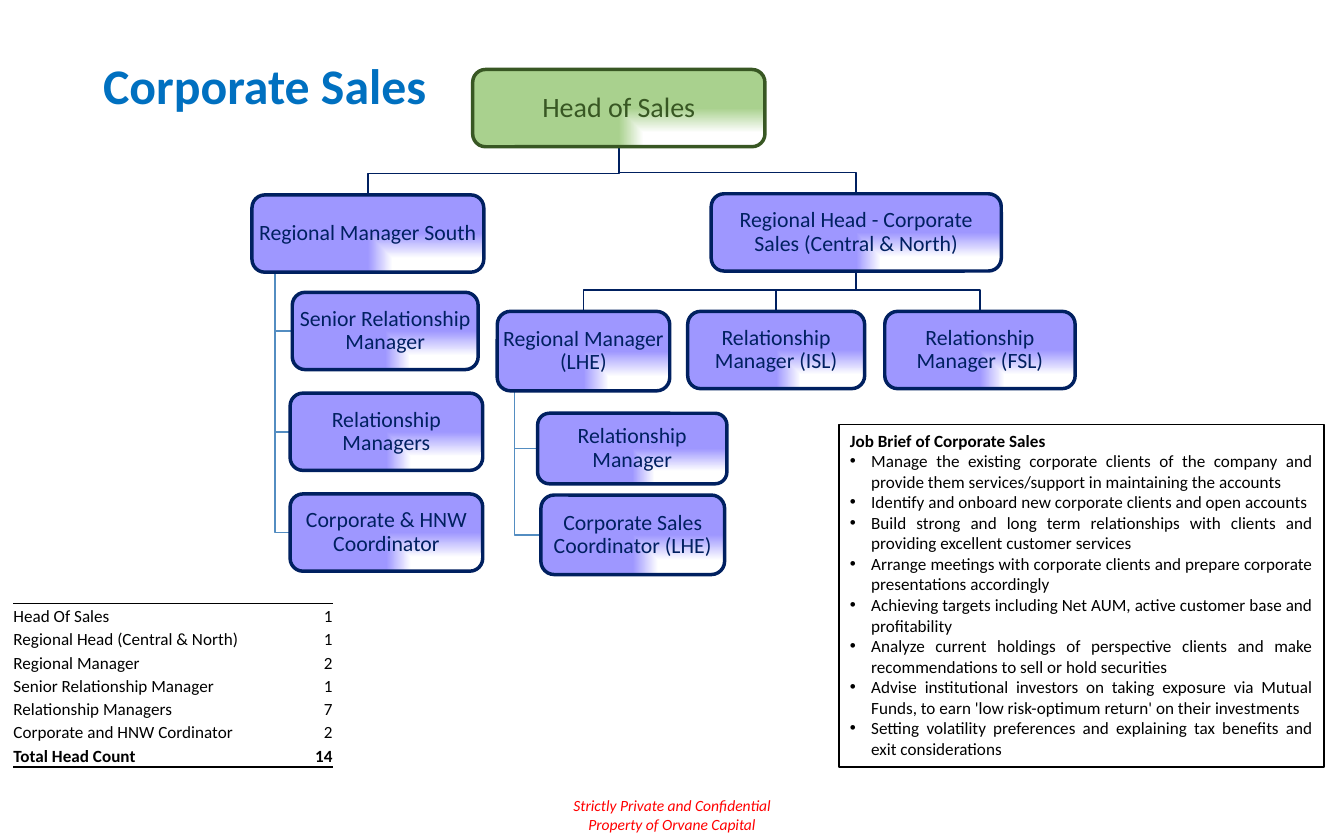
from lxml import etree
from pptx import Presentation
from pptx.dml.color import RGBColor
from pptx.enum import shapes, text
from pptx.oxml import ns
from pptx.util import Inches, Pt

C = {"title": "0070C0", "navy": "002060", "branch": "538DC1", "lilac": "9E97FF",
     "green": "A9D18E", "dark_green": "385723", "black": "000000", "white": "FFFFFF", "red": "FF0000"}
A = "http://schemas.openxmlformats.org/drawingml/2006/main"
ALIGN = text.PP_ALIGN


def write(p, words, size, color, align, **font):
    p.alignment = align
    r = p.add_run()
    r.text = words
    r.font.color.rgb = RGBColor.from_string(C[color])
    for name, value in {"name": "Calibri", "size": Pt(size), **font}.items():
        setattr(r.font, name, value)


def frame(tf, inset_x, inset_y, anchor):
    for name, value in {"word_wrap": True, "vertical_anchor": anchor,
                        "margin_left": Inches(inset_x), "margin_right": Inches(inset_x),
                        "margin_top": Inches(inset_y), "margin_bottom": Inches(inset_y)}.items():
        setattr(tf, name, value)
    return tf


prs = Presentation()
prs.slide_width, prs.slide_height = Inches(12), Inches(7.5)
s = prs.slides.add_slide(prs.slide_layouts[5])

# Title
title = s.shapes.title
for name, value in {"left": 0.82, "top": 0.4, "width": 3.98, "height": 0.77}.items():
    setattr(title, name, Inches(value))
tf = frame(title.text_frame, 0.1, 0.05, text.MSO_ANCHOR.MIDDLE)
tf.paragraphs[0].line_spacing = 0.9
write(tf.paragraphs[0], "Corporate Sales", 32, "title", ALIGN.LEFT, bold=True)

# Confidentiality footer
sp = s.shapes.add_textbox(Inches(5.01), Inches(7.06), Inches(1.98), Inches(0.44))
tf = frame(sp.text_frame, 0.1, 0.05, text.MSO_ANCHOR.TOP)
write(tf.paragraphs[0], "Strictly Private and Confidential", 10, "red", ALIGN.CENTER, italic=True)
write(tf.add_paragraph(), "Property of Orvane Capital", 10, "red", ALIGN.CENTER, italic=True)

# Organisation chart: key -> label, left, top, width, height
boxes = {
    "head": ("Head of Sales", 4.22, 0.62, 2.61, 0.69),
    "south": ("Regional Manager South", 2.25, 1.74, 2.07, 0.69),
    "senior": ("Senior Relationship Manager", 2.61, 2.61, 1.66, 0.69),
    "managers": ("Relationship Managers", 2.59, 3.51, 1.72, 0.69),
    "hnw": ("Corporate & HNW Coordinator", 2.59, 4.41, 1.72, 0.69),
    "north": ("Regional Head - Corporate Sales (Central & North)", 6.35, 1.73, 2.59, 0.69),
    "lhe": ("Regional Manager (LHE)", 4.44, 2.78, 1.54, 0.71),
    "lhe_manager": ("Relationship Manager", 4.8, 3.69, 1.69, 0.63),
    "lhe_coordinator": ("Corporate Sales Coordinator (LHE)", 4.83, 4.42, 1.64, 0.71),
    "isl": ("Relationship Manager (ISL)", 6.14, 2.78, 1.58, 0.69),
    "fsl": ("Relationship Manager (FSL)", 7.9, 2.78, 1.7, 0.69),
}
reports = {"north": ["fsl", "isl", "lhe"], "lhe": ["lhe_coordinator", "lhe_manager"],
           "head": ["north", "south"], "south": ["hnw", "managers", "senior"]}
hanging = ("lhe", "south")  # their reports hang from a line on the left

# Reporting lines, behind the boxes
for boss, staff in reports.items():
    _, left, top, width, height = boxes[boss]
    bottom = top + height
    for member in staff:
        _, x, y, w, h = boxes[member]
        if boss in hanging:
            trunk = left + width / 10
            points = [(trunk, bottom), (trunk, y + h / 2), (x, y + h / 2)]
        else:
            trunk, bend = left + width / 2, y - 0.19
            points = [(trunk, bottom), (trunk, bend), (x + w / 2, bend), (x + w / 2, y)]
        points = [(Inches(px), Inches(py)) for px, py in points]
        fb = s.shapes.build_freeform(*points[0])
        fb.add_line_segments(points[1:], close=False)
        sp = fb.convert_to_shape()
        sp.shadow.inherit = False
        sp.fill.background()
        sp.line.width = Pt(1)
        sp.line.color.rgb = RGBColor.from_string(C["branch" if boss in hanging else "navy"])

# Boxes with a white glow in the lower right corner
for key, (label, *place) in boxes.items():
    fill, ink, size = ("green", "dark_green", 18) if key == "head" else ("lilac", "navy", 14)
    sp = s.shapes.add_shape(shapes.MSO_SHAPE.ROUNDED_RECTANGLE, *map(Inches, place))
    sp.shadow.inherit = False
    sp.line.width = Pt(2.25)
    sp.line.color.rgb = RGBColor.from_string(C[ink])
    sp.fill.background()
    stops = "".join(f'<a:gs pos="{pos}"><a:srgbClr val="{C[color]}"/></a:gs>'
                    for pos, color in ((0, "white"), (36000, "white"), (100000, fill)))
    gradient = etree.fromstring(
        f'<a:gradFill xmlns:a="{A}" rotWithShape="1"><a:gsLst>{stops}</a:gsLst>'
        '<a:path path="rect"><a:fillToRect l="100000" t="100000"/></a:path></a:gradFill>')
    sppr = sp._element.spPr
    sppr.replace(sppr.find(ns.qn("a:noFill")), gradient)
    tf = frame(sp.text_frame, 0.01, 0.01, text.MSO_ANCHOR.MIDDLE)
    tf.paragraphs[0].line_spacing = 0.9
    write(tf.paragraphs[0], label, size, ink, ALIGN.CENTER)

# Head count table
rows = [("Head Of Sales", "1"), ("Regional Head (Central & North)", "1"),
        ("Regional Manager", "2"), ("Senior Relationship Manager", "1"),
        ("Relationship Managers", "7"), ("Corporate and HNW Cordinator", "2"),
        ("Total Head Count", "14")]
last = len(rows) - 1
table = s.shapes.add_table(len(rows), 2, Inches(0.12), Inches(5.39), Inches(2.85), Inches(1.46)).table
table.first_row = table.horz_banding = False
style = table._tbl.tblPr.find(ns.qn("a:tableStyleId"))
style.text = "{2D5ABB26-0587-4C30-8999-92F81FD0307C}"  # no style, no grid
table.columns[0].width, table.columns[1].width = Inches(2.27), Inches(0.58)
for i, row in enumerate(rows):
    for j, words in enumerate(row):
        cell = table.cell(i, j)
        cell.fill.background()
        cell.vertical_anchor = text.MSO_ANCHOR.BOTTOM
        for side in ("left", "right", "top", "bottom"):
            setattr(cell, f"margin_{side}", 0)
        write(cell.text_frame.paragraphs[0], words, 11, "black",
              ALIGN.RIGHT if j else ALIGN.LEFT, bold=i == last)
        if i in (0, last):
            edge = "lnB" if i else "lnT"
            cell._tc.get_or_add_tcPr().insert(0, etree.fromstring(
                f'<a:{edge} xmlns:a="{A}" w="12700"><a:solidFill>'
                f'<a:srgbClr val="{C["black"]}"/></a:solidFill></a:{edge}>'))

# Job brief
duties = [
    "Manage the existing corporate clients of the company and provide them services/support in maintaining the accounts",
    "Identify and onboard new corporate clients and open accounts",
    "Build strong and long term relationships with clients and providing excellent customer services",
    "Arrange meetings with corporate clients and prepare corporate presentations accordingly",
    "Achieving targets including Net AUM, active customer base and profitability",
    "Analyze current holdings of perspective clients and make recommendations to sell or hold securities",
    "Advise institutional investors on taking exposure via Mutual Funds, to earn 'low risk-optimum return' on their investments",
    "Setting volatility preferences and explaining tax benefits and exit considerations",
]
sp = s.shapes.add_shape(shapes.MSO_SHAPE.RECTANGLE, Inches(7.49), Inches(3.79), Inches(4.33), Inches(3.06))
sp.shadow.inherit = False
sp.fill.solid()
sp.fill.fore_color.rgb = RGBColor.from_string(C["white"])
sp.line.width = Pt(1)
sp.line.color.rgb = RGBColor.from_string(C["black"])
tf = frame(sp.text_frame, 0.1, 0.05, text.MSO_ANCHOR.TOP)
write(tf.paragraphs[0], "Job Brief of Corporate Sales", 11, "black", ALIGN.JUSTIFY, bold=True)
for duty in duties:
    p = tf.add_paragraph()
    ppr = p._p.get_or_add_pPr()
    ppr.set("marL", str(Inches(0.19)))
    ppr.set("indent", str(-Inches(0.19)))
    etree.SubElement(ppr, ns.qn("a:buFont"), typeface="Arial")
    etree.SubElement(ppr, ns.qn("a:buChar"), char="•")
    write(p, duty, 11, "black", ALIGN.JUSTIFY)

prs.save("out.pptx")
